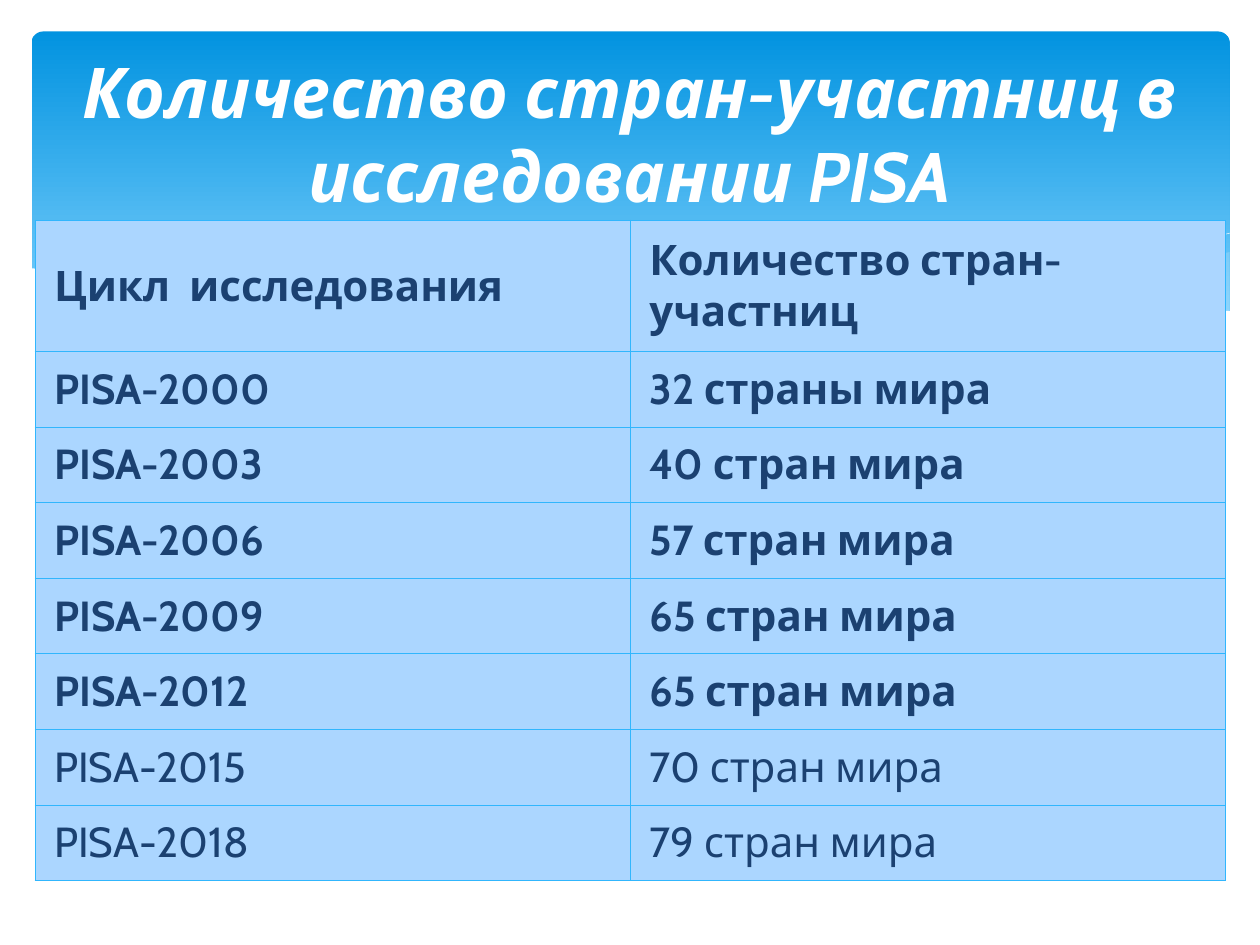
from lxml import etree
from pptx import Presentation
from pptx.dml.color import RGBColor
from pptx.enum import shapes, text
from pptx.oxml import ns
from pptx.util import Inches, Pt

FONT = "Cabin"
WHITE, MIST, NAVY = "FFFFFF", "C6E7FC", "1B4171"
BANNER_TOP, BANNER_BOTTOM = "0293E0", "83D3FE"
CELL, BORDER = "ABD6FF", "31B6FD"

TITLE = "Количество стран-участниц в исследовании PISA"
HEADERS = ("Цикл  исследования", "Количество стран-участниц")
COUNTRIES = {
    2000: "32 страны",
    2003: "40 стран",
    2006: "57 стран",
    2009: "65 стран",
    2012: "65 стран",
    2015: "70 стран",
    2018: "79 стран",
}
LAST_BOLD_YEAR = 2012


def color(value):
    return RGBColor.from_string(value)


def write(frame, words, size=24, hue=NAVY, bold=False, italic=False, align=None):
    para = frame.paragraphs[0]
    para.alignment = align
    span = para.add_run()
    span.text = words
    font = span.font
    font.name, font.size, font.bold, font.italic = FONT, Pt(size), bold, italic
    font.color.rgb = color(hue)


def add_polygon(page, corners, fill, opacity=100):
    start, *others = [(Inches(x), Inches(y)) for x, y in corners]
    builder = page.shapes.build_freeform(*start)
    builder.add_line_segments(others, close=True)
    polygon = builder.convert_to_shape()
    polygon.shadow.inherit = False
    polygon.line.fill.background()
    polygon.fill.solid()
    polygon.fill.fore_color.rgb = color(fill)
    tint = polygon._element.spPr.find(".//" + ns.qn("a:srgbClr"))
    etree.SubElement(tint, ns.qn("a:alpha"), val=str(opacity * 1000))


def add_crest(page, start, end):
    """Draw the thin white line along the top of the swell."""
    ends = [Inches(value) for value in (*start, *end)]
    crest = page.shapes.add_connector(shapes.MSO_CONNECTOR.STRAIGHT, *ends)
    crest.line.color.rgb = color(WHITE)
    crest.line.width = Pt(0.25)
    etree.SubElement(crest._element.spPr, ns.qn("a:effectLst"))


def add_banner(page, left, top, width, height):
    """Draw the gradient panel, its pale swell and the white area that cuts it off."""
    right, bottom = left + width, top + height
    panel = page.shapes.add_shape(shapes.MSO_SHAPE.ROUNDED_RECTANGLE, Inches(left),
                                  Inches(top), Inches(width), Inches(height))
    panel.adjustments[0] = 0.034
    panel.shadow.inherit = False
    panel.line.fill.background()
    panel.fill.gradient()
    panel.fill.gradient_angle = 270
    stops = zip(panel.fill.gradient_stops, ((0, BANNER_TOP), (0.9, BANNER_BOTTOM)))
    for stop, (position, hue) in stops:
        stop.position = position
        stop.color.rgb = color(hue)

    left_cut, right_cut = top + 1.88, top + 2.22
    swell_tip = (right - 3.15, top + 2.4)
    add_polygon(page, [swell_tip, (right, top + 1.75), (right, right_cut)],
                fill=MIST, opacity=29)
    add_crest(page, swell_tip, (right, top + 1.6))

    bleed = 0.02
    add_polygon(page, [(left - bleed, left_cut), (right + bleed, right_cut),
                       (right + bleed, bottom + bleed), (left - bleed, bottom + bleed)],
                fill=WHITE)


def border_cell(cell):
    props = cell._tc.get_or_add_tcPr()
    for index, side in enumerate(("lnL", "lnR", "lnT", "lnB")):
        edge = etree.Element(ns.qn("a:" + side), w=str(Pt(0.75)))
        fill = etree.SubElement(edge, ns.qn("a:solidFill"))
        etree.SubElement(fill, ns.qn("a:srgbClr"), val=BORDER)
        props.insert(index, edge)


def fill_cell(cell, words, bold):
    cell.margin_left = cell.margin_right = Inches(0.15)
    cell.margin_top = cell.margin_bottom = Inches(0.04)
    cell.vertical_anchor = text.MSO_ANCHOR.MIDDLE
    cell.fill.solid()
    cell.fill.fore_color.rgb = color(CELL)
    border_cell(cell)
    write(cell.text_frame, words, bold=bold)


def add_cycle_table(page, left, top, width, header_height, row_height):
    rows = [(HEADERS, header_height, True)]
    for year, count in COUNTRIES.items():
        labels = (f"PISA-{year}", f"{count} мира")
        rows.append((labels, row_height, year <= LAST_BOLD_YEAR))

    height = sum(row[1] for row in rows)
    table = page.shapes.add_table(len(rows), len(HEADERS), Inches(left), Inches(top),
                                  Inches(width), Inches(height)).table
    for column in table.columns:
        column.width = Inches(width / len(HEADERS))
    for row, (labels, tall, bold) in zip(table.rows, rows):
        row.height = Inches(tall)
        for cell, label in zip(row.cells, labels):
            fill_cell(cell, label, bold)


def place_title(page, left, top, width, height):
    title = page.shapes.title
    title.left, title.top = Inches(left), Inches(top)
    title.width, title.height = Inches(width), Inches(height)
    frame = title.text_frame
    frame.word_wrap = True
    frame.auto_size = text.MSO_AUTO_SIZE.NONE
    frame.vertical_anchor = text.MSO_ANCHOR.MIDDLE
    write(frame, TITLE, size=40, hue=WHITE, bold=True, italic=True,
          align=text.PP_ALIGN.CENTER)
    page.shapes._spTree.append(title._element)  # bring in front of the banner


def main():
    deck = Presentation()
    deck.slide_width, deck.slide_height = Inches(10), Inches(7.5)
    page = deck.slides.add_slide(deck.slide_layouts[5])
    add_banner(page, 0.25, 0.25, 9.51, 2.7)
    add_cycle_table(page, 0.28, 1.75, 9.45, header_height=1.04, row_height=0.6)
    place_title(page, 0.5, 0.37, 9, 1.37)
    deck.save("out.pptx")


if __name__ == "__main__":
    main()
